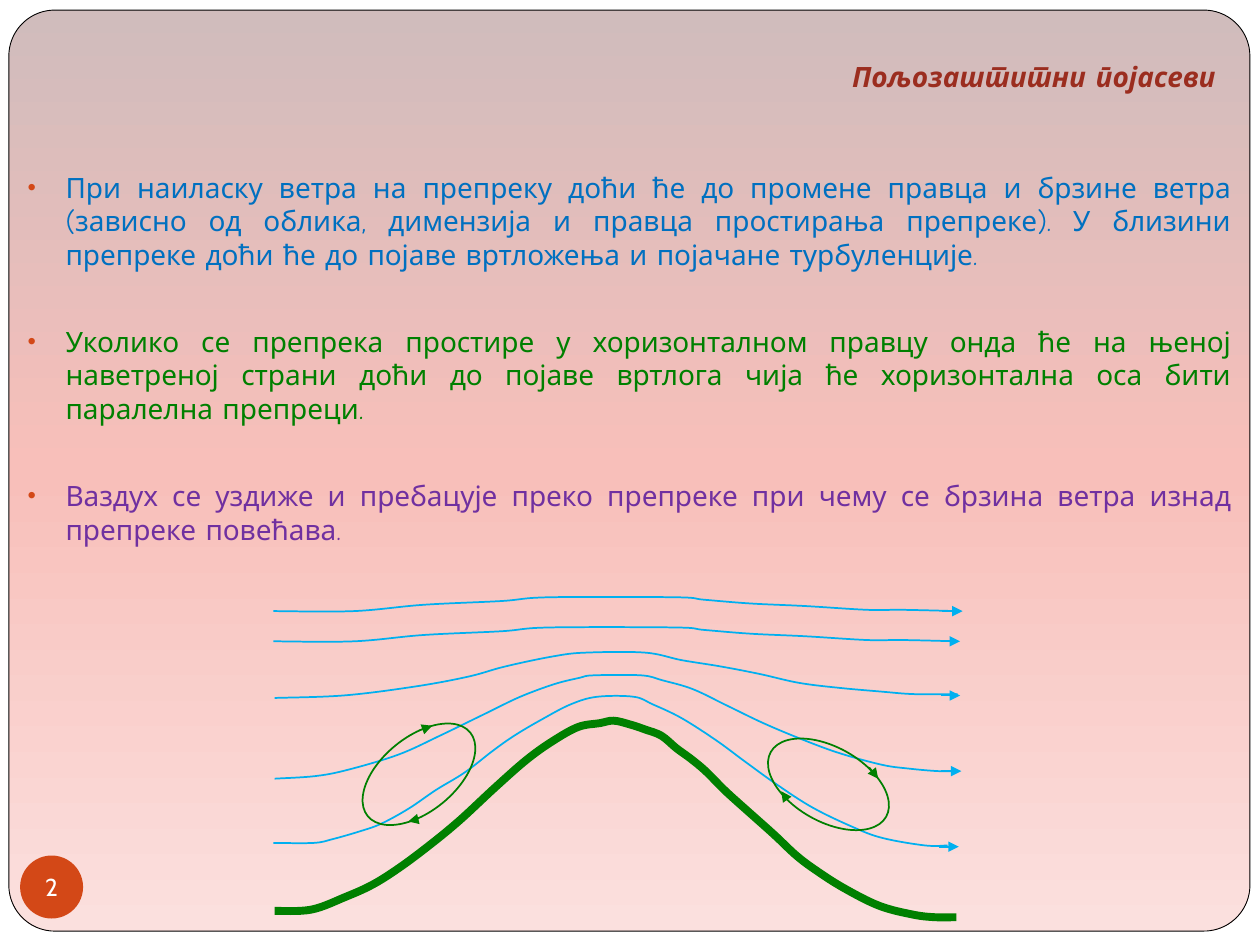
"""Build the slide on shelterbelts: three bullets and wind flow over a hill."""
from copy import deepcopy
from dataclasses import dataclass

from lxml.etree import SubElement
from pptx import Presentation
from pptx.dml.color import RGBColor
from pptx.enum.shapes import MSO_CONNECTOR, MSO_SHAPE
from pptx.enum.text import MSO_ANCHOR, MSO_AUTO_SIZE, PP_ALIGN
from pptx.oxml.ns import qn
from pptx.util import Pt


@dataclass
class Theme:
    white: str = "FFFFFF"
    black: str = "000000"
    accent: str = "D34817"
    title: str = "9B2D1F"
    wind: str = "00B0F0"
    green: str = "008000"
    blue: str = "0070C0"
    purple: str = "7030A0"
    gradient: tuple = ((0, "D0BCBC"), (0.5, "F8BFBA"), (1, "FBE0DE"))
    font: str = "Comic Neue"
    number_font: str = "Cabin"
    text_size: float = 16
    number_size: float = 14
    leading: float = 19.2
    gap: float = 30.6


T = Theme()
PX = 9144


def add_run(p, text, font, size, color):
    r = p.add_run()
    r.text = text
    r.font.name, r.font.size = font, Pt(size)
    r.font.color.rgb = RGBColor.from_string(color)
    r._r.get_or_add_rPr().set("lang", "sr-Cyrl-RS")
    return r


def add_curve(s, pts, color, width):
    fb = s.shapes.build_freeform(*pts[0], scale=PX)
    fb.add_line_segments(pts[1:], close=False)
    sp = fb.convert_to_shape()
    sp.shadow.inherit = False
    sp.fill.background()
    sp.line.color.rgb = RGBColor.from_string(color)
    sp.line.width = Pt(width)
    path = sp._element.spPr.find(".//" + qn("a:path"))
    x0, y0 = (min(v) for v in zip(*pts))
    local = [((x - x0) * PX, (y - y0) * PX) for x, y in pts]
    path.set("w", str(max(x for x, y in local)))
    path.set("h", str(max(y for x, y in local)))
    for node in list(path):
        path.remove(node)
    start = SubElement(path, qn("a:moveTo"))
    SubElement(start, qn("a:pt"), x=str(local[0][0]), y=str(local[0][1]))
    ends = [local[0], *local, local[-1]]
    for a, b, c, d in zip(ends, ends[1:], ends[2:], ends[3:]):
        bend = SubElement(path, qn("a:cubicBezTo"))
        for x, y in ((b[0] + (c[0] - a[0]) / 6, b[1] + (c[1] - a[1]) / 6),
                     (c[0] - (d[0] - b[0]) / 6, c[1] - (d[1] - b[1]) / 6), c):
            SubElement(bend, qn("a:pt"), x=str(round(x)), y=str(round(y)))


prs = Presentation()
prs.slide_width, prs.slide_height = 1000 * PX, 750 * PX
s = prs.slides.add_slide(prs.slide_layouts[1])
s.background.fill.solid()
s.background.fill.fore_color.rgb = RGBColor.from_string(T.white)

frame = s.shapes.add_shape(MSO_SHAPE.ROUNDED_RECTANGLE, 7 * PX, 8 * PX, 985 * PX, 731 * PX)
frame.adjustments[0] = 0.05
frame.shadow.inherit = False
frame.line.color.rgb = RGBColor.from_string(T.black)
frame.line.width = Pt(0.5)
frame.fill.gradient()
frame.fill.gradient_angle = 270
stops = frame._element.spPr.find(".//" + qn("a:gsLst"))
stops.append(deepcopy(stops[-1]))
for stop, (pos, color) in zip(frame.fill.gradient_stops, T.gradient):
    stop.position = pos
    stop.color.rgb = RGBColor.from_string(color)
s.shapes._spTree.insert(2, frame._element)

title = s.shapes.title
title.left, title.top, title.width, title.height = 50 * PX, 42 * PX, 925 * PX, 33 * PX
tf = title.text_frame
tf.word_wrap, tf.auto_size = True, MSO_AUTO_SIZE.NONE
tf.vertical_anchor = MSO_ANCHOR.TOP
p = tf.paragraphs[0]
p.alignment = PP_ALIGN.RIGHT
r = add_run(p, "Пољозаштитни појасеви", T.font, T.text_size, T.title)
r.font.bold = r.font.italic = True

bullets = [
    ("При наиласку ветра на препреку доћи ће до промене правца и брзине ветра "
     "(зависно од облика, димензија и правца простирања препреке). У близини "
     "препреке доћи ће до појаве вртложења и појачане турбуленције.", T.blue),
    ("Уколико се препрека простире у хоризонталном правцу онда ће на њеној "
     "наветреној страни доћи до појаве вртлога чија ће хоризонтална оса бити "
     "паралелна препреци.", T.green),
    ("Ваздух се уздиже и пребацује преко препреке при чему се брзина ветра изнад "
     "препреке повећава.", T.purple),
]
body = s.placeholders[1]
body.left, body.top, body.width, body.height = 12 * PX, 130 * PX, 976 * PX, 283 * PX
tf = body.text_frame
tf.word_wrap, tf.auto_size = True, MSO_AUTO_SIZE.NONE
tf.vertical_anchor = MSO_ANCHOR.TOP
for i, (text, color) in enumerate(bullets):
    p = tf.add_paragraph() if i else tf.paragraphs[0]
    p.alignment = PP_ALIGN.JUSTIFY
    p.line_spacing = Pt(T.leading)
    p.space_before = Pt(T.gap if i else 0)
    pPr = p._p.get_or_add_pPr()
    pPr.set("marL", str(30 * PX))
    pPr.set("indent", str(-30 * PX))
    SubElement(SubElement(pPr, qn("a:buClr")), qn("a:srgbClr"), val=T.accent)
    SubElement(pPr, qn("a:buSzPct"), val="85000")
    SubElement(pPr, qn("a:buChar"), char="•")
    add_run(p, text, T.font, T.text_size, color)

hill = [(218, 723), (247, 722), (274, 712), (296, 702), (318, 688), (342, 670),
        (365, 651), (393, 625), (418, 603), (439, 588), (459, 577), (476, 574),
        (487, 572), (500, 575), (512, 579), (525, 584), (537, 594), (548, 602),
        (560, 612), (576, 628), (596, 646), (615, 663), (632, 679), (648, 691),
        (670, 705), (698, 719), (725, 726), (742, 728), (759, 728)]
low = [(217, 669), (249, 669), (264, 666), (285, 660), (302, 654), (324, 642),
       (346, 627), (369, 613), (391, 596), (408, 584), (430, 571), (453, 559),
       (474, 553), (503, 553), (518, 559), (541, 570), (569, 588), (592, 605),
       (617, 623), (645, 641), (676, 656), (700, 665), (734, 671), (752, 671)]
middle = [(218, 618), (250, 616), (276, 611), (316, 599), (349, 584), (386, 566),
          (413, 553), (440, 543), (460, 538), (471, 536), (509, 536), (526, 540),
          (550, 547), (577, 560), (606, 574), (637, 587), (667, 598), (700, 607),
          (721, 610), (744, 612), (758, 612)]
high = [(218, 554), (273, 552), (329, 545), (372, 537), (401, 529), (439, 521),
        (465, 518), (512, 518), (541, 524), (572, 529), (603, 535), (634, 542),
        (666, 546), (700, 549), (726, 551), (760, 551)]
top = [(217, 485), (281, 485), (336, 480), (398, 477), (436, 474), (536, 474),
       (559, 476), (596, 479), (639, 481), (688, 484), (716, 484), (759, 485)]
add_curve(s, hill, T.green, 4.5)
for stream in (low, middle, high, [(x, y + 24) for x, y in top], top):
    add_curve(s, stream, T.wind, 1)

for x, y, angle in ((303, 562, 50.8), (628, 570, 119.3)):
    sp = s.shapes.add_shape(MSO_SHAPE.OVAL, x * PX, y * PX, 59 * PX, 105 * PX)
    sp.rotation = angle
    sp.shadow.inherit = False
    sp.fill.background()
    sp.line.color.rgb = RGBColor.from_string(T.green)
    sp.line.width = Pt(1)

whirl_arrows = [(332, 580, 343, 576), (332, 650, 324, 652),
                (690, 609, 697, 618), (625, 635, 620, 628)]
wind_arrows = [(745, 672, 761, 672), (747, 612, 763, 612), (747, 552, 762, 552),
               (747, 509, 762, 509), (748, 485, 764, 485)]
for arrows, color, width in ((whirl_arrows, T.green, 0.75), (wind_arrows, T.wind, 1)):
    for ends in arrows:
        cn = s.shapes.add_connector(MSO_CONNECTOR.STRAIGHT, *(v * PX for v in ends))
        cn.line.color.rgb = RGBColor.from_string(color)
        cn.line.width = Pt(width)
        SubElement(cn.line._get_or_add_ln(), qn("a:tailEnd"), type="triangle")
        SubElement(cn._element.spPr, qn("a:effectLst"))

badge = s.shapes.add_shape(MSO_SHAPE.OVAL, 16 * PX, 679 * PX, 50 * PX, 50 * PX)
badge.shadow.inherit = False
badge.fill.solid()
badge.fill.fore_color.rgb = RGBColor.from_string(T.accent)
badge.line.fill.background()
tf = badge.text_frame
tf.word_wrap = False
tf.vertical_anchor = MSO_ANCHOR.MIDDLE
tf.margin_left = tf.margin_right = tf.margin_top = tf.margin_bottom = 0
p = tf.paragraphs[0]
p.alignment = PP_ALIGN.CENTER
add_run(p, "2", T.number_font, T.number_size, T.white)

prs.save("out.pptx")
